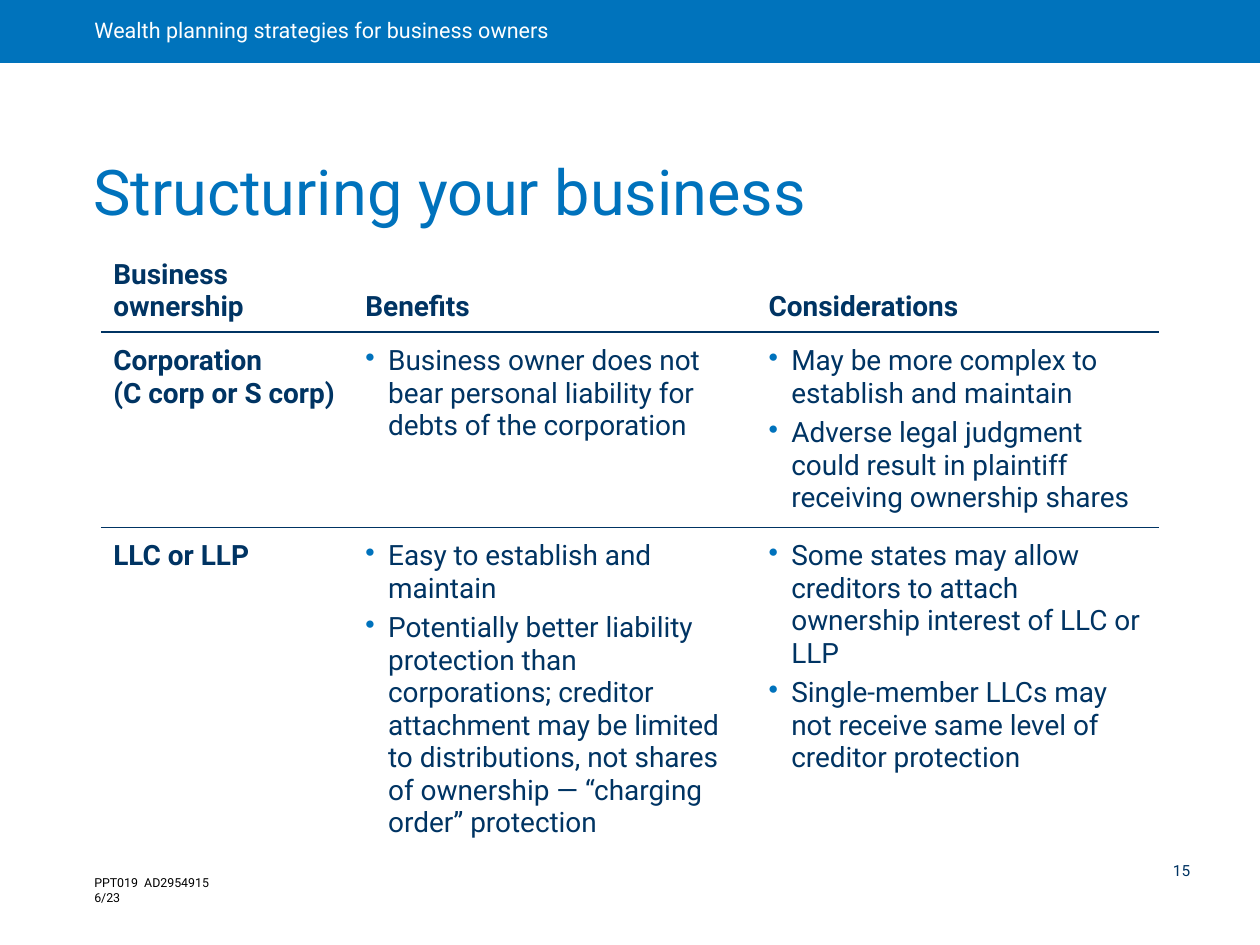
from pptx import Presentation
from pptx.dml.color import RGBColor
from pptx.enum.shapes import MSO_SHAPE
from pptx.enum.text import MSO_ANCHOR, MSO_AUTO_SIZE, PP_ALIGN
from pptx.oxml import parse_xml
from pptx.oxml.ns import nsdecls
from pptx.util import Pt

NAVY = RGBColor(0x00, 0x34, 0x63)
TITLE_BLUE = RGBColor(0x00, 0x72, 0xBC)
BANNER_BLUE = RGBColor(0x00, 0x73, 0xBC)
WHITE = RGBColor(0xFF, 0xFF, 0xFF)
BLACK = RGBColor(0x00, 0x00, 0x00)

PLAIN_TABLE = "{2D5ABB26-0587-4C30-8999-92F81FD0307C}"
RULE_WIDTHS = [1.5, 0.5]  # below the header, below the first body row

HEADINGS = ["Business ownership", "Benefits", "Considerations"]
STRUCTURES = [
    (
        ["Corporation ", "(C corp or S corp)"],
        ["Business owner does not bear personal liability for debts of the corporation"],
        [
            "May be more complex to establish and maintain",
            "Adverse legal judgment could result in plaintiff receiving ownership shares",
        ],
    ),
    (
        ["LLC or LLP"],
        [
            "Easy to establish and maintain",
            "Potentially better liability protection than corporations; creditor attachment "
            "may be limited to distributions, not shares of ownership — “charging order” protection",
        ],
        [
            "Some states may allow creditors to attach ownership interest of LLC or LLP",
            "Single-member LLCs may not receive same level of creditor protection",
        ],
    ),
]


class PageBuilder:
    """Holds the style and the current slide."""

    font_name = "Roboto"

    def __init__(self, page):
        self.page = page

    def apply(self, target, formats):
        for name, value in formats.items():
            setattr(target, name, value)

    def add_lines(self, frame, lines, size, color, bold=False, spacing=None, after=0,
                  bullet=False):
        for index, line in enumerate(lines):
            para = frame.paragraphs[0] if index == 0 else frame.add_paragraph()
            if bullet:
                self.add_bullet(para)
            self.apply(para, {"alignment": PP_ALIGN.LEFT, "line_spacing": spacing,
                              "space_before": Pt(0), "space_after": Pt(after)})
            span = para.add_run()
            span.text = line
            self.apply(span.font, {"name": self.font_name, "size": Pt(size), "bold": bold})
            span.font.color.rgb = color

    def add_bullet(self, para):
        props = para._p.get_or_add_pPr()
        props.set("marL", str(Pt(13)))
        props.set("indent", str(Pt(-13)))
        props.append(parse_xml(
            f'<a:buClr {nsdecls("a")}><a:srgbClr val="{TITLE_BLUE}"/></a:buClr>'))
        props.append(parse_xml(f'<a:buChar {nsdecls("a")} char="•"/>'))

    def set_frame(self, frame, insets, anchor=MSO_ANCHOR.TOP, wrap=True):
        left, top, right, bottom = map(Pt, insets)
        self.apply(frame, {
            "margin_left": left, "margin_top": top, "margin_right": right,
            "margin_bottom": bottom, "vertical_anchor": anchor,
            "word_wrap": wrap, "auto_size": MSO_AUTO_SIZE.NONE})

    def banner(self, area, text):
        box = self.page.shapes.add_shape(MSO_SHAPE.RECTANGLE, *map(Pt, area))
        box.shadow.inherit = False
        box.fill.solid()
        box.fill.fore_color.rgb = BANNER_BLUE
        box.line.fill.background()
        self.set_frame(box.text_frame, (54, 0, 16, 0), MSO_ANCHOR.MIDDLE)
        self.add_lines(box.text_frame, [text], 12.3, WHITE, spacing=0.9)

    def title(self, area, text):
        box = self.page.shapes.title
        self.apply(box, dict(zip(("left", "top", "width", "height"), map(Pt, area))))
        self.set_frame(box.text_frame, (8, 4.5, 8, 4.5), MSO_ANCHOR.BOTTOM)
        self.add_lines(box.text_frame, [text], 36, TITLE_BLUE, spacing=0.9)

    def label(self, area, lines, size, color, insets, **formats):
        box = self.page.shapes.add_textbox(*map(Pt, area))
        self.set_frame(box.text_frame, insets)
        self.add_lines(box.text_frame, lines, size, color, **formats)

    def cell(self, cell, lines, inset, anchor, rules, **formats):
        self.apply(cell, {
            "margin_left": Pt(7.2), "margin_right": Pt(7.2), "margin_top": Pt(inset),
            "margin_bottom": Pt(inset), "vertical_anchor": anchor})
        props = cell._tc.get_or_add_tcPr()
        for side, width in rules.items():
            props.append(parse_xml(
                f'<a:{side} {nsdecls("a")} w="{Pt(width)}"><a:solidFill>'
                f'<a:srgbClr val="{NAVY}"/></a:solidFill></a:{side}>'))
        cell.fill.background()
        self.add_lines(cell.text_frame, lines, 16, NAVY, **formats)

    def table(self, area, widths, heights, headings, body):
        holder = self.page.shapes.add_table(len(heights), len(widths), *map(Pt, area))
        table = holder.table
        self.apply(table, {"first_row": False, "horz_banding": False})
        table._tbl.tblPr.find("{*}tableStyleId").text = PLAIN_TABLE
        for column, width in zip(table.columns, widths):
            column.width = Pt(width)
        for row, height in zip(table.rows, heights):
            row.height = Pt(height)
        holder.height = Pt(area[3])

        rows = [[[heading] for heading in headings], *body]
        for r, entries in enumerate(rows):
            rules = {}
            if r > 0:
                rules["lnT"] = RULE_WIDTHS[r - 1]
            if r < len(RULE_WIDTHS):
                rules["lnB"] = RULE_WIDTHS[r]
            header = r == 0
            for c, lines in enumerate(entries):
                listed = not header and c > 0
                self.cell(table.cell(r, c), lines, 5 if header else 7.2,
                          MSO_ANCHOR.BOTTOM if header else MSO_ANCHOR.TOP, rules,
                          bold=not listed, bullet=listed, after=4 if listed else 0)


def main():
    deck = Presentation()
    deck.slide_width, deck.slide_height = Pt(720), Pt(540)
    builder = PageBuilder(deck.slides.add_slide(deck.slide_layouts[5]))

    # Banner and title
    builder.banner((0, 0, 720, 36), "Wealth planning strategies for business owners")
    builder.title((45.4, 113.8, 620.6, 21.6), "Structuring your business")

    # Comparison of ownership structures
    builder.table((57.6, 142.6, 604.8, 315.4), [144, 230.4, 230.4], [21.6, 85, 127.4],
                  HEADINGS, STRUCTURES)

    # Footer and page number
    builder.label((46.8, 496.5, 86.4, 24), ["PPT019  AD2954915", "6/23"], 7.1, BLACK,
                  (7.2, 3.6, 7.2, 3.6))
    builder.label((670.3, 490.3, 40.3, 15.8), ["15"], 8.8, NAVY, (0, 3, 3, 3), spacing=0.9)

    deck.save("out.pptx")


if __name__ == "__main__":
    main()
